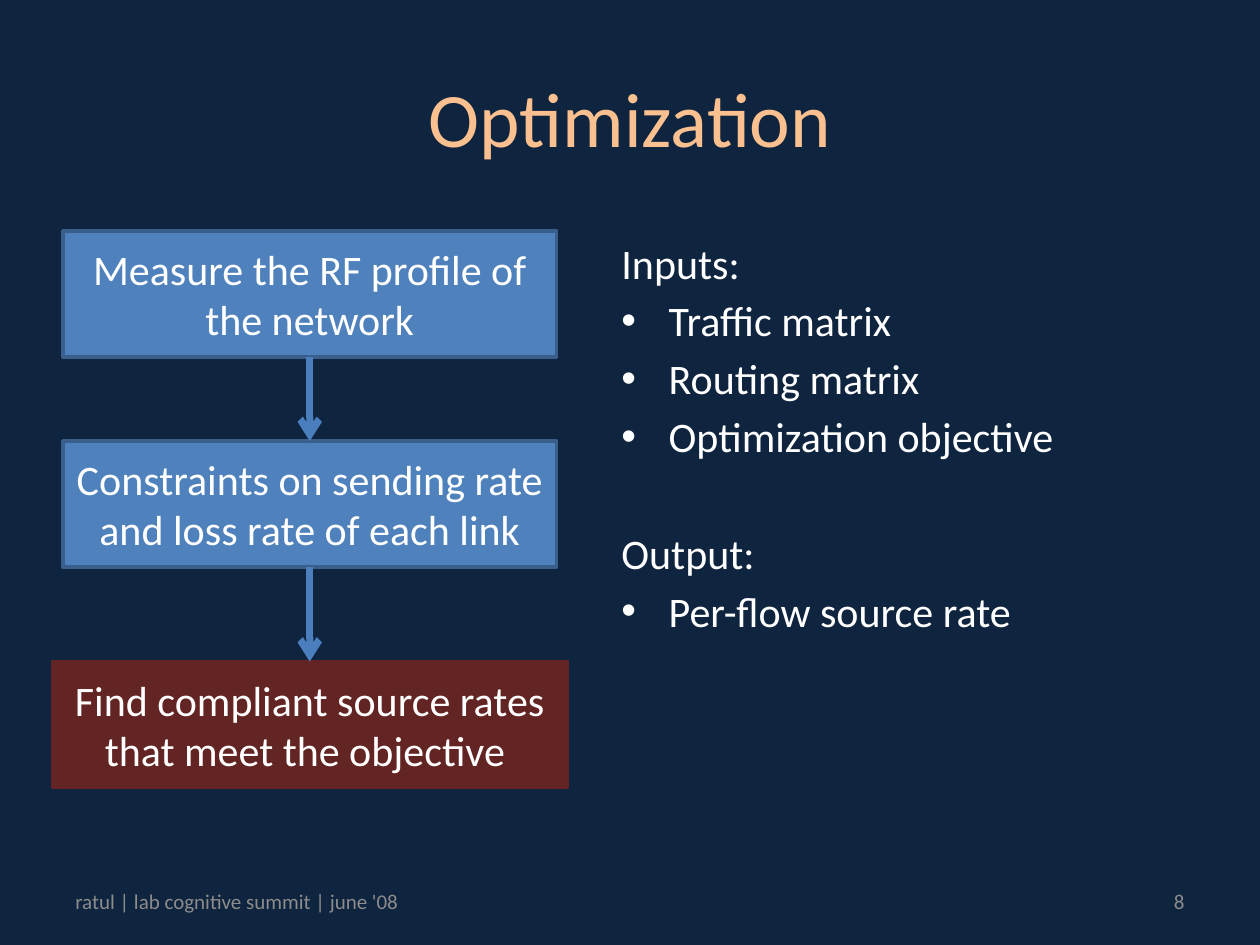
from lxml import etree
from pptx import Presentation
from pptx.dml.color import RGBColor
from pptx.enum import shapes, text
from pptx.oxml.ns import qn
from pptx.util import Pt

COLORS = {
    "background": "0F243E", "title": "FAC090", "text": "FFFFFF", "footer": "8C8C8C",
    "step": "4F81BD", "step_line": "3A5F8C", "goal": "632523", "arrow": "4B7EBC",
}
LEFT, CENTER, RIGHT = text.PP_ALIGN.LEFT, text.PP_ALIGN.CENTER, text.PP_ALIGN.RIGHT
MIDDLE, TOP = text.MSO_ANCHOR.MIDDLE, text.MSO_ANCHOR.TOP


def rgb(name):
    return RGBColor.from_string(COLORS[name])


def write(sp, lines, size, color, align=LEFT, anchor=MIDDLE):
    tf = sp.text_frame
    tf.word_wrap = True
    tf.vertical_anchor = anchor
    tf.text = "\n".join(lines)
    for p in tf.paragraphs:
        p.alignment = align
        for r in p.runs:
            r.font.name, r.font.size = "Calibri", Pt(size)
            r.font.color.rgb = rgb(color)
    return tf


def add_text(s, box, lines, *style):
    return write(s.shapes.add_textbox(*map(Pt, box)), lines, *style)


def add_step(s, box, label, fill, line):
    sp = s.shapes.add_shape(shapes.MSO_SHAPE.RECTANGLE, *map(Pt, box))
    sp.shadow.inherit = False
    sp.fill.solid()
    sp.fill.fore_color.rgb = rgb(fill)
    sp.line.color.rgb = rgb(line)
    sp.line.width = Pt(2)
    write(sp, [label], 24, "text", CENTER)
    return sp


def add_arrow(s, upper, lower):
    """Join the bottom of one step to the top of the next."""
    c = s.shapes.add_connector(shapes.MSO_CONNECTOR.STRAIGHT, 0, 0, 0, 0)
    c.begin_connect(upper, 2)
    c.end_connect(lower, 0)
    c.line.color.rgb = rgb("arrow")
    c.line.width = Pt(4)
    etree.SubElement(c.line._get_or_add_ln(), qn("a:tailEnd"), type="arrow")
    etree.SubElement(c._element.spPr, qn("a:effectLst"))


def add_flow(s, box):
    left, top, width, height = box
    steps = [  # label, offset from top, side inset, fill, line
        ("Measure the RF profile of the network", 0, 6, "step", "step_line"),
        ("Constraints on sending rate and loss rate of each link", 120, 6, "step", "step_line"),
        ("Find compliant source rates that meet the objective ", 246, 0, "goal", "goal"),
    ]
    step_height = height - steps[-1][1]
    boxes = [
        add_step(s, (left + inset, top + dy, width - 2 * inset, step_height), label, fill, line)
        for label, dy, inset, fill, line in steps
    ]
    for upper, lower in zip(boxes, boxes[1:]):
        add_arrow(s, upper, lower)


def add_lists(s, box):
    """Place headed bullet lists, one under the other."""
    groups = {
        "Inputs:": ["Traffic matrix", "Routing matrix", "Optimization objective"],
        "Output:": ["Per-flow source rate"],
    }
    lines = [line for head, items in groups.items() for line in (head, *items)]
    tf = add_text(s, box, lines, 24, "text", LEFT, TOP)
    for i, p in enumerate(tf.paragraphs):
        is_head = p.text in groups
        p.space_before = Pt(38 if is_head and i else 4.2)
        pPr = p._p.get_or_add_pPr()
        pPr.set("marL", str(Pt(27)))
        pPr.set("indent", str(-Pt(27)))
        if is_head:
            etree.SubElement(pPr, qn("a:buNone"))
        else:
            etree.SubElement(pPr, qn("a:buFont"), typeface="Arial")
            etree.SubElement(pPr, qn("a:buChar"), char="•")


def add_footer(s, box):
    left, top, width, height = box
    add_text(s, (left, top, 210, height), ["ratul | lab cognitive summit | june '08"], 12, "footer")
    add_text(s, (left + width - 168, top, 168, height), ["8"], 12, "footer", RIGHT)


def main():
    prs = Presentation()
    prs.slide_width, prs.slide_height = Pt(720), Pt(540)
    s = prs.slides.add_slide(prs.slide_layouts[6])
    s.background.fill.solid()
    s.background.fill.fore_color.rgb = rgb("background")
    add_text(s, (36, 21.6, 648, 90), ["Optimization"], 44, "title", CENTER)
    add_flow(s, (30, 132, 294, 318))
    add_lists(s, (348, 132, 348, 336))
    add_footer(s, (36, 500.5, 648, 28.8))
    prs.save("out.pptx")


if __name__ == "__main__":
    main()
